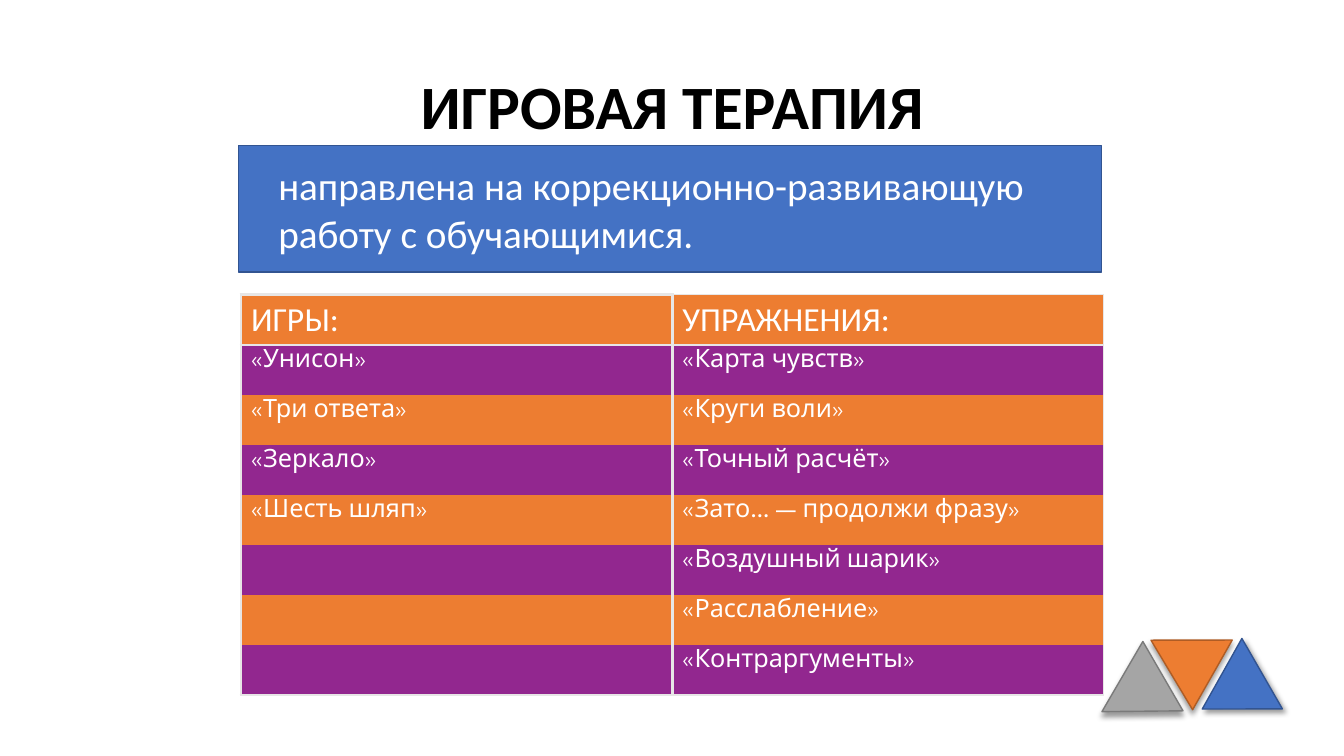
from lxml import etree
from pptx import Presentation
from pptx.dml.color import RGBColor
from pptx.enum import shapes, text
from pptx.oxml import ns
from pptx.util import Pt

WHITE = RGBColor(0xFF, 0xFF, 0xFF)
BLACK = RGBColor(0, 0, 0)
BLUE = RGBColor(0x44, 0x72, 0xC4)
DARK_BLUE = RGBColor(0x32, 0x54, 0x91)
ORANGE = RGBColor(0xED, 0x7D, 0x31)
DARK_ORANGE = RGBColor(0xAF, 0x5C, 0x24)
GRAY = RGBColor(0xA5, 0xA5, 0xA5)
DARK_GRAY = RGBColor(0x7A, 0x7A, 0x7A)
PURPLE = RGBColor(0x92, 0x27, 0x8F)
BORDER = RGBColor(0xE7, 0xE6, 0xE6)

GAMES = ["ИГРЫ:", "«Унисон»", "«Три ответа»", "«Зеркало»", "«Шесть шляп»", "", "", ""]
EXERCISES = ["УПРАЖНЕНИЯ:", "«Карта чувств»", "«Круги воли»", "«Точный расчёт»",
             "«Зато… — продолжи фразу»", "«Воздушный шарик»", "«Расслабление»",
             "«Контраргументы»"]
THICK, THIN, NONE = 2.25, 1, 0


def write(frame, words, size, font="Calibri", color=WHITE, bold=False,
          align=text.PP_ALIGN.LEFT, spacing=1.0):
    paragraph = frame.paragraphs[0]
    paragraph.alignment = align
    paragraph.line_spacing = spacing
    run = paragraph.add_run()
    run.text = words
    run.font.size = Pt(size)
    run.font.name = font
    run.font.bold = bold
    run.font.color.rgb = color


def add_block(slide, kind, box, fill, line):
    block = slide.shapes.add_shape(kind, *map(Pt, box))
    block.shadow.inherit = False
    block.fill.solid()
    block.fill.fore_color.rgb = fill
    block.line.color.rgb = line
    block.line.width = Pt(1)
    return block


def add_triangle(slide, box, rotation, fill, line, shadow_angle):
    triangle = add_block(slide, shapes.MSO_SHAPE.ISOSCELES_TRIANGLE, box, fill, line)
    triangle.adjustments[0] = 0.49
    triangle.rotation = rotation
    # Soft shadow
    effects = triangle._element.spPr.find(ns.qn("a:effectLst"))
    shadow = etree.SubElement(effects, ns.qn("a:outerShdw"), blurRad=str(Pt(4)),
                              dist=str(Pt(3)), dir=str(shadow_angle * 60000),
                              rotWithShape="0")
    shade = etree.SubElement(shadow, ns.qn("a:srgbClr"), val="000000")
    etree.SubElement(shade, ns.qn("a:alpha"), val="40000")


def set_borders(cell, **widths):
    properties = cell._tc.get_or_add_tcPr()
    for side in "LRTB":
        width = widths[side]
        line = etree.SubElement(properties, ns.qn(f"a:ln{side}"), w=str(Pt(width)))
        if width:
            fill = etree.SubElement(line, ns.qn("a:solidFill"))
            etree.SubElement(fill, ns.qn("a:srgbClr"), val=str(BORDER))
        else:
            etree.SubElement(line, ns.qn("a:noFill"))


def add_activities(slide, left, top, column_width, row_height):
    count = len(GAMES)
    table = slide.shapes.add_table(count, 2, Pt(left), Pt(top), Pt(2 * column_width),
                                   Pt(count * row_height)).table
    table.first_row = table.horz_banding = False
    for column in table.columns:
        column.width = Pt(column_width)
    for row, entries in enumerate(zip(GAMES, EXERCISES)):
        table.rows[row].height = Pt(row_height)
        header = row == 0
        for col, entry in enumerate(entries):
            cell = table.cell(row, col)
            outer = THIN if col else THICK
            set_borders(cell, L=THICK, R=outer,
                        T=outer if header else THICK if row == 1 else NONE,
                        B=THICK if header else outer if row == count - 1 else NONE)
            cell.fill.solid()
            cell.fill.fore_color.rgb = PURPLE if row % 2 else ORANGE
            cell.vertical_anchor = text.MSO_ANCHOR.TOP
            cell.margin_top = cell.margin_bottom = Pt(3.6)
            if entry:
                write(cell.text_frame, entry, 24 if header else 18,
                      font="Calibri" if header else "League Spartan")


def main():
    deck = Presentation()
    deck.slide_width, deck.slide_height = Pt(960), Pt(540)
    slide = deck.slides.add_slide(deck.slide_layouts[6])

    # Title
    title = slide.shapes.add_textbox(Pt(91.5), Pt(25.2), Pt(777.6), Pt(106.5))
    title.text_frame.word_wrap = True
    title.text_frame.vertical_anchor = text.MSO_ANCHOR.MIDDLE
    write(title.text_frame, "ИГРОВАЯ ТЕРАПИЯ", 44, color=BLACK, bold=True,
          align=text.PP_ALIGN.CENTER, spacing=0.9)

    # Purpose of the therapy
    purpose = add_block(slide, shapes.MSO_SHAPE.RECTANGLE, (170.6, 103.9, 616.3, 90.5),
                        BLUE, DARK_BLUE)
    purpose.text_frame.margin_left = Pt(28.2)
    write(purpose.text_frame,
          "направлена на коррекционно-развивающую работу с обучающимися.", 28)

    # Games and exercises
    add_activities(slide, 172.1, 210.4, 308.2, 35.73)

    # Corner triangles
    add_triangle(slide, (851, 468.7, 58, 49.7), 240.1, BLUE, DARK_BLUE, 45)
    add_triangle(slide, (822.2, 457.2, 58, 49.7), 179.9, ORANGE, DARK_ORANGE, 90)
    add_triangle(slide, (794.2, 470.9, 58, 49.7), 120.2, GRAY, DARK_GRAY, 90)

    deck.save("out.pptx")


if __name__ == "__main__":
    main()
